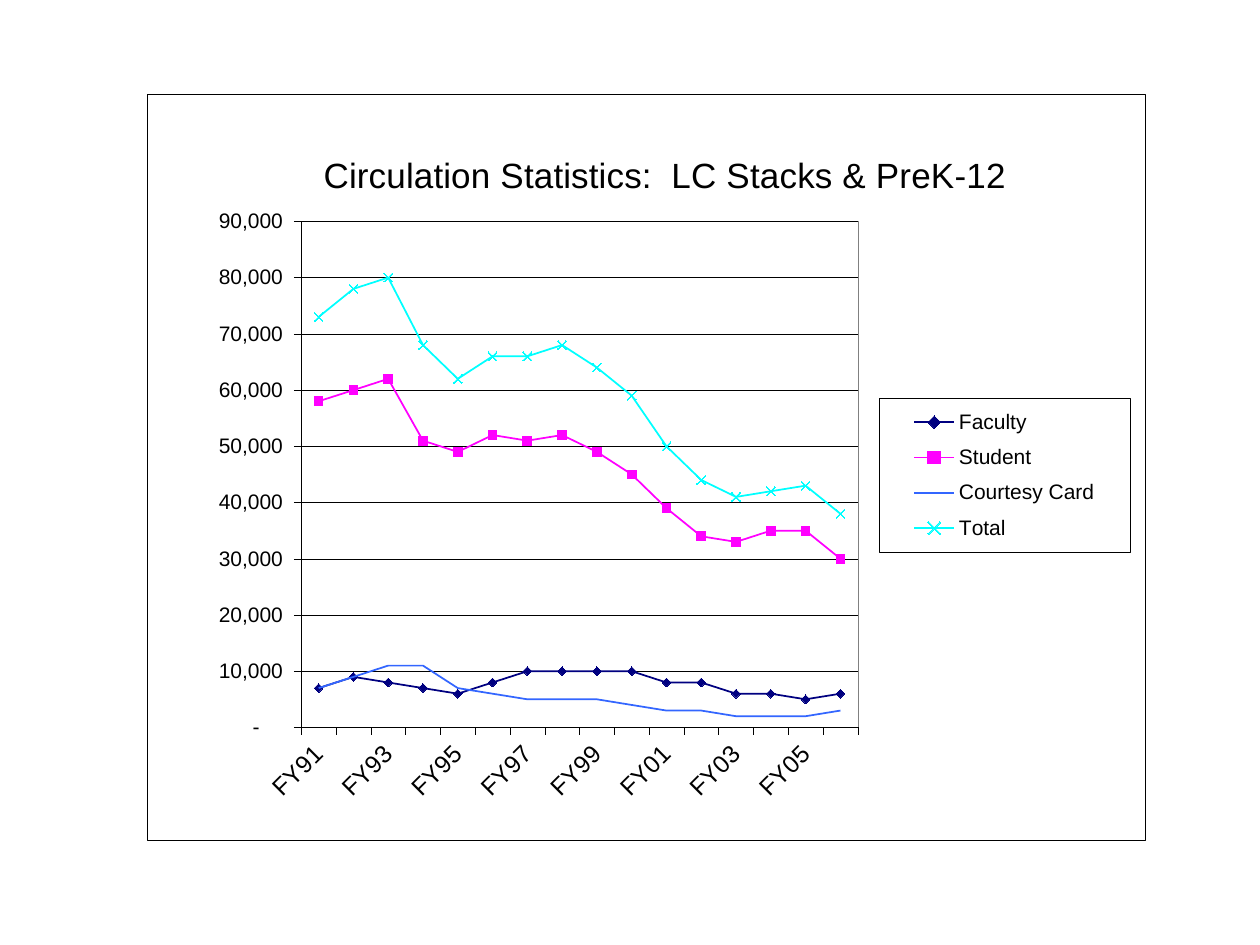
from dataclasses import dataclass
from typing import Optional

from lxml import etree
from pptx import Presentation
from pptx.chart.data import CategoryChartData
from pptx.dml.color import RGBColor
from pptx.enum.chart import XL_CHART_TYPE, XL_LEGEND_POSITION, XL_MARKER_STYLE, XL_TICK_MARK
from pptx.oxml import parse_xml
from pptx.oxml.ns import nsdecls, qn
from pptx.util import Inches, Pt

LINE_MARKERS = XL_CHART_TYPE.LINE_MARKERS
RIGHT = XL_LEGEND_POSITION.RIGHT
DIAMOND = XL_MARKER_STYLE.DIAMOND
SQUARE = XL_MARKER_STYLE.SQUARE
CROSS = XL_MARKER_STYLE.X
NO_MARKER = XL_MARKER_STYLE.NONE
OUTSIDE = XL_TICK_MARK.OUTSIDE
NO_TICK = XL_TICK_MARK.NONE

COLORS = {
    "ink": "000000",
    "plot_edge": "808080",
    "faculty": "000080",
    "student": "FF00FF",
    "courtesy": "3366FF",
    "total": "00FFFF",
}
FONT = "Arial"
HAIRLINE = Pt(0.25)
TITLE = "Circulation Statistics:  LC Stacks & PreK-12"
NUMBER_FORMAT = '_(* #,##0_);_(* \\(#,##0\\);_(* "-"??_);_('
YEARS = [f"FY{year % 100:02d}" for year in range(1991, 2007)]


@dataclass
class Borrower:
    name: str
    color: str
    marker: XL_MARKER_STYLE
    thousands: list[int]


BORROWERS = [
    Borrower("Faculty", "faculty", DIAMOND,
             [7, 9, 8, 7, 6, 8, 10, 10, 10, 10, 8, 8, 6, 6, 5, 6]),
    Borrower("Student", "student", SQUARE,
             [58, 60, 62, 51, 49, 52, 51, 52, 49, 45, 39, 34, 33, 35, 35, 30]),
    Borrower("Courtesy Card", "courtesy", NO_MARKER,
             [7, 9, 11, 11, 7, 6, 5, 5, 5, 4, 3, 3, 2, 2, 2, 3]),
    Borrower("Total", "total", CROSS,
             [73, 78, 80, 68, 62, 66, 66, 68, 64, 59, 50, 44, 41, 42, 43, 38]),
]


def rgb(color: str) -> RGBColor:
    return RGBColor.from_string(COLORS[color])


def style_font(font, size: float) -> None:
    font.name = FONT
    font.size = Pt(size)
    font.bold = False
    font.color.rgb = rgb("ink")


def style_line(line, color: str, width: int) -> None:
    line.color.rgb = rgb(color)
    line.width = width


def outline(color: str):
    return parse_xml(
        f'<c:spPr {nsdecls("c", "a")}><a:noFill/><a:ln w="{HAIRLINE}"><a:solidFill>'
        f'<a:srgbClr val="{COLORS[color]}"/></a:solidFill></a:ln></c:spPr>'
    )


def place(part, after: Optional[str], x: float, y: float,
          w: Optional[float] = None, h: Optional[float] = None) -> None:
    for old_layout in part.findall(qn("c:layout")):
        part.remove(old_layout)
    layout = etree.Element(qn("c:layout"))
    manual = etree.SubElement(layout, qn("c:manualLayout"))
    settings = {"xMode": "edge", "yMode": "edge", "x": x, "y": y, "w": w, "h": h}
    if after is None:
        settings = {"layoutTarget": "inner", **settings}
    for key, value in settings.items():
        if value is not None:
            etree.SubElement(manual, qn(f"c:{key}")).set("val", str(value))
    if after is None:
        part.insert(0, layout)
    else:
        part.find(qn(after)).addnext(layout)


def style_axis(axis, size: float) -> None:
    axis.major_tick_mark = OUTSIDE
    axis.minor_tick_mark = NO_TICK
    style_font(axis.tick_labels.font, size)
    style_line(axis.format.line, "ink", HAIRLINE)


def style_series(series, borrower: Borrower) -> None:
    series.smooth = False
    style_line(series.format.line, borrower.color, Pt(1))
    marker = series.marker
    marker.style = borrower.marker
    if borrower.marker == NO_MARKER:
        return
    marker.size = 5
    style_line(marker.format.line, borrower.color, Pt(0.75))
    if borrower.marker == CROSS:
        marker.format.fill.background()
    else:
        marker.format.fill.solid()
        marker.format.fill.fore_color.rgb = rgb(borrower.color)


def add_circulation_chart(slide) -> None:
    data = CategoryChartData(number_format=NUMBER_FORMAT)
    data.categories = YEARS
    for borrower in BORROWERS:
        data.add_series(borrower.name, [value * 1000 for value in borrower.thousands])
    chart = slide.shapes.add_chart(
        LINE_MARKERS, Inches(1.17), Inches(0.75), Inches(7.92), Inches(5.92), data
    ).chart
    style_font(chart.font, 12)
    chart.plots[0].vary_by_categories = False
    for series, borrower in zip(chart.plots[0].series, BORROWERS):
        style_series(series, borrower)

    chart.has_title = True
    heading = chart.chart_title.text_frame
    heading.text = TITLE
    style_font(heading.paragraphs[0].runs[0].font, 20)

    years = chart.category_axis
    style_axis(years, 14)
    counts = chart.value_axis
    style_axis(counts, 12)
    counts.minimum_scale = 0
    counts.maximum_scale = 90000
    counts.major_unit = 10000
    counts.has_major_gridlines = True
    style_line(counts.major_gridlines.format.line, "ink", HAIRLINE)
    counts.tick_labels.number_format = NUMBER_FORMAT
    counts.tick_labels.number_format_is_linked = False

    chart.has_legend = True
    chart.legend.position = RIGHT
    chart.legend.include_in_layout = False
    style_font(chart.legend.font, 12)

    root = chart.element
    year_axis = root.find(".//" + qn("c:catAx"))
    year_axis.find(qn("c:txPr")).find(qn("a:bodyPr")).set("rot", "-2700000")
    label_skip = etree.Element(qn("c:tickLblSkip"))
    label_skip.set("val", "2")
    year_axis.find(qn("c:noMultiLvlLbl")).addprevious(label_skip)

    plot_area = root.find(".//" + qn("c:plotArea"))
    legend = root.find(".//" + qn("c:legend"))
    place(plot_area, None, 0.154, 0.17, 0.558, 0.679)
    place(root.find(".//" + qn("c:title")), "c:tx", 0.17, 0.07)
    place(legend, "c:legendPos", 0.733, 0.407, 0.252, 0.207)
    plot_area.append(outline("plot_edge"))
    for framed in (legend, root):
        framed.find(qn("c:txPr")).addprevious(outline("ink"))


def main() -> None:
    deck = Presentation()
    deck.slide_width = Inches(10)
    deck.slide_height = Inches(7.5)
    slide = deck.slides.add_slide(deck.slide_layouts[6])
    add_circulation_chart(slide)
    deck.save("out.pptx")


if __name__ == "__main__":
    main()
